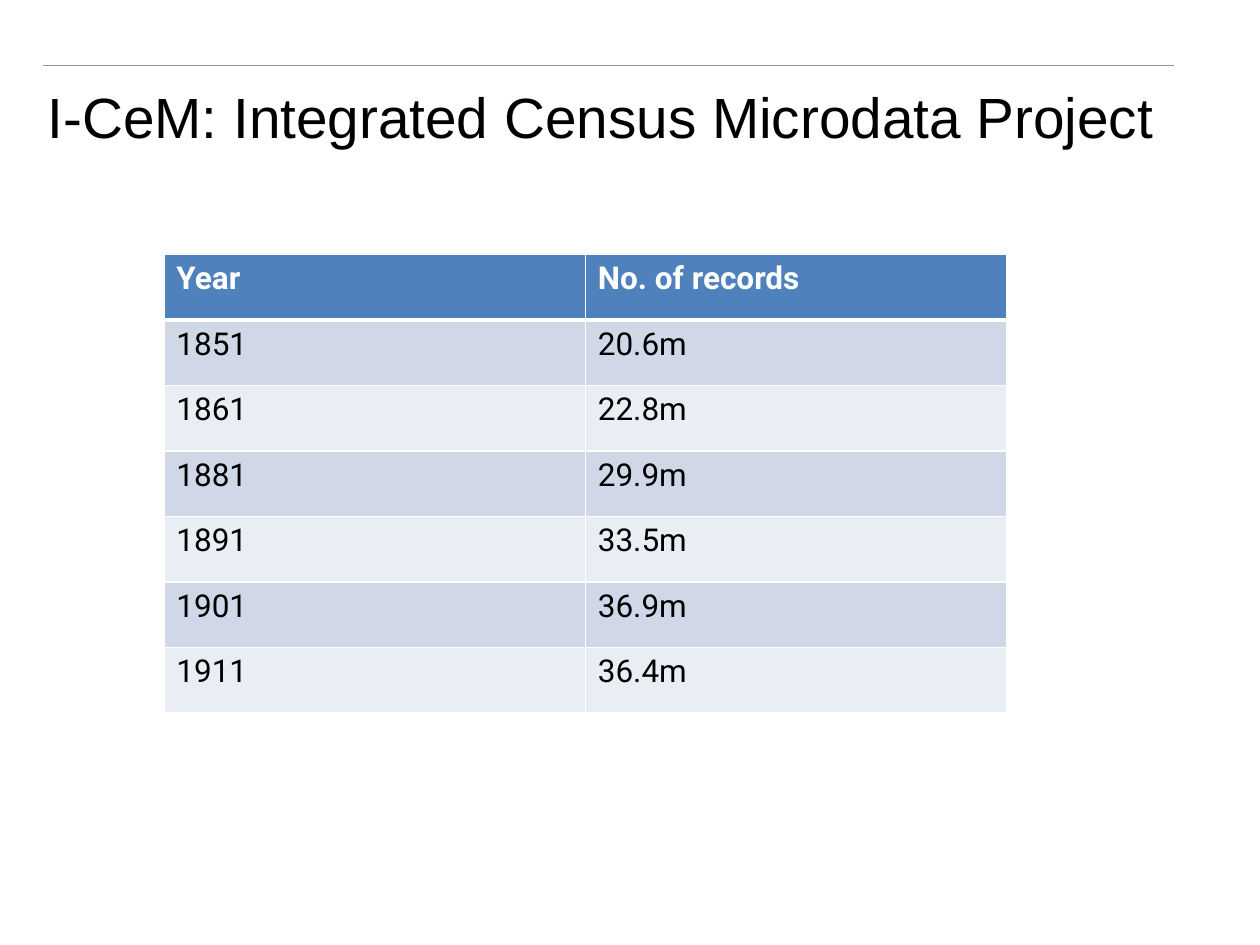
from lxml import etree
from pptx import Presentation
from pptx.dml.color import RGBColor
from pptx.enum import shapes, text
from pptx.oxml.ns import qn
from pptx.util import Inches, Pt

CENSUS_RECORDS = [
    ("Year", "No. of records"),
    ("1851", "20.6m"),
    ("1861", "22.8m"),
    ("1881", "29.9m"),
    ("1891", "33.5m"),
    ("1901", "36.9m"),
    ("1911", "36.4m"),
]
HEADER_FILL = "4F81BD"
BAND_FILLS = ("E9EDF4", "D0D8E8")


def color(hex_value):
    """Turn a hex string into a colour."""
    return RGBColor.from_string(hex_value)


def set_font(paragraph, name, size, hex_value, bold=False):
    """Set the font of a whole paragraph."""
    font = paragraph.font
    font.name, font.size, font.bold = name, Pt(size), bold
    font.color.rgb = color(hex_value)


def add_rule(slide, left, right, y):
    """Draw the thin grey rule above the title."""
    rule = slide.shapes.add_connector(
        shapes.MSO_CONNECTOR.STRAIGHT, Inches(left), Inches(y), Inches(right), Inches(y)
    )
    rule.line.color.rgb = color("8E959C")
    rule.line.width = Pt(0.75)
    etree.SubElement(rule._element.spPr, qn("a:effectLst"))


def add_title(slide, wording):
    """Add the slide title."""
    title = slide.shapes.add_textbox(Inches(0.28), Inches(0.29), Inches(9), Inches(1.25))
    frame = title.text_frame
    frame.word_wrap = True
    frame.margin_right = 0
    frame.vertical_anchor = text.MSO_ANCHOR.MIDDLE
    frame.text = wording
    set_font(frame.paragraphs[0], "Arial", 32.4, "000000")


def set_borders(cell, top, bottom):
    """Give a cell white borders, with the top and bottom widths in points."""
    properties = cell._tc.get_or_add_tcPr()
    for side, width in (("L", 1), ("R", 1), ("T", top), ("B", bottom)):
        border = etree.SubElement(properties, qn(f"a:ln{side}"), w=str(Pt(width)))
        fill = etree.SubElement(border, qn("a:solidFill"))
        etree.SubElement(fill, qn("a:srgbClr"), val="FFFFFF")


def add_records_table(slide, records):
    """Add the banded table of records per census year."""
    row_count, column_count = len(records), len(records[0])
    table = slide.shapes.add_table(
        row_count, column_count, Inches(1.3), Inches(2.02),
        Inches(3.345 * column_count), Inches(0.52 * row_count),
    ).table
    for row_index, record in enumerate(records):
        header = row_index == 0
        for column_index, value in enumerate(record):
            cell = table.cell(row_index, column_index)
            set_borders(cell, 3 if row_index == 1 else 1, 3 if header else 1)
            cell.fill.solid()
            cell.fill.fore_color.rgb = color(HEADER_FILL if header else BAND_FILLS[row_index % 2])
            cell.text = value
            set_font(cell.text_frame.paragraphs[0], "Roboto", 18,
                     "FFFFFF" if header else "000000", header)


def main():
    """Build and save the slide."""
    presentation = Presentation()
    presentation.slide_width, presentation.slide_height = Inches(10), Inches(7.5)
    slide = presentation.slides.add_slide(presentation.slide_layouts[6])
    add_rule(slide, 0.34, 9.32, 0.52)
    add_title(slide, "I-CeM: Integrated Census Microdata Project")
    add_records_table(slide, CENSUS_RECORDS)
    presentation.save("out.pptx")


if __name__ == "__main__":
    main()
